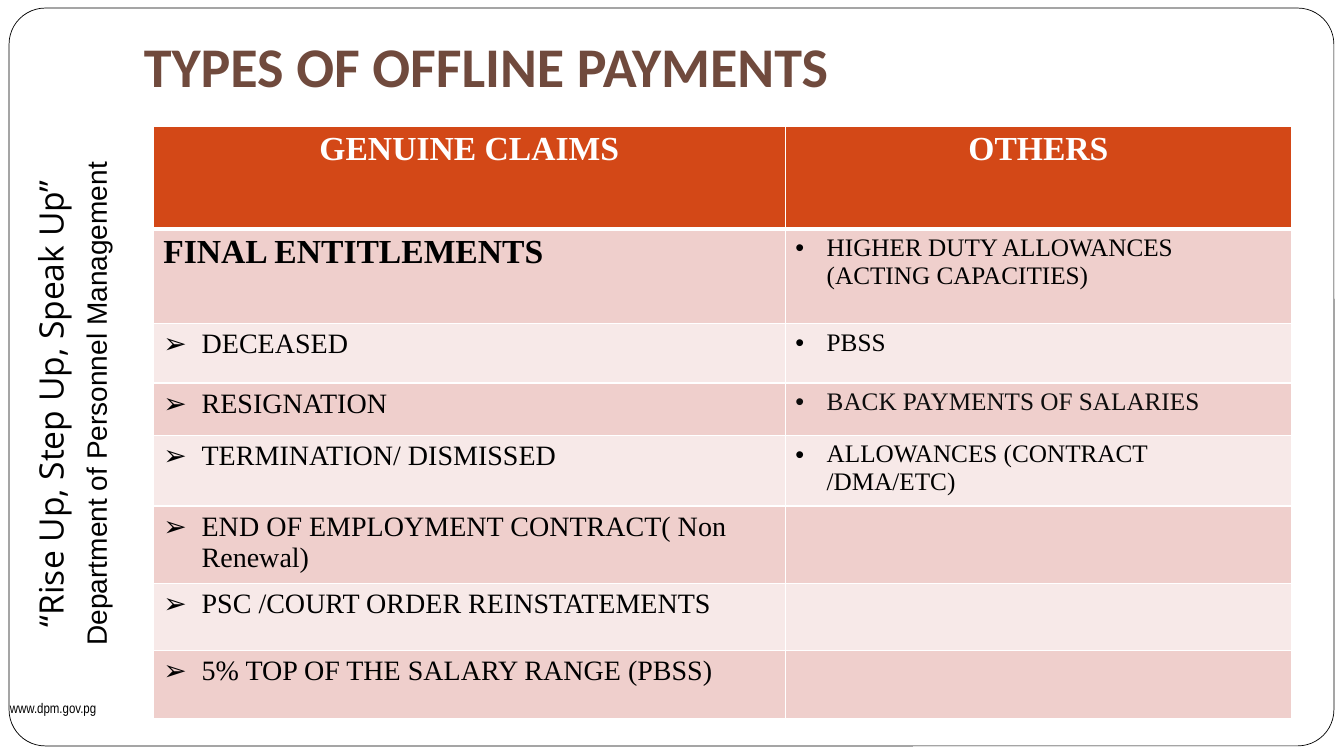
"""Build the slide on types of offline payments."""
from dataclasses import dataclass
from typing import Optional

from lxml.etree import SubElement
from pptx import Presentation
from pptx.dml.color import RGBColor
from pptx.enum.shapes import MSO_SHAPE as SHAPE
from pptx.enum.text import MSO_ANCHOR as ANCHOR, PP_ALIGN as ALIGN
from pptx.oxml.ns import qn
from pptx.util import Inches, Pt

BLACK = RGBColor(0x00, 0x00, 0x00)
NEAR_BLACK = RGBColor(0x0D, 0x0D, 0x0D)
WHITE = RGBColor(0xFF, 0xFF, 0xFF)
BROWN = RGBColor(0x70, 0x4A, 0x3D)
ORANGE = RGBColor(0xD3, 0x48, 0x17)
BANDS = RGBColor(0xEF, 0xCF, 0xCC), RGBColor(0xF7, 0xE9, 0xE8)


@dataclass
class Line:
    text: str
    size: float
    font: str
    color: RGBColor = BLACK
    bold: bool = False
    align: ALIGN = ALIGN.LEFT
    before: float = 0
    bullet: str = ""
    indent: float = 0


@dataclass
class Box:
    at: tuple[float, float, float, float]
    lines: list[Line]
    rotation: float = 0
    anchor: ANCHOR = ANCHOR.TOP
    bottom: float = 0.05


def heading(text: str) -> Line:
    return Line(text, 24, "Times New Roman", WHITE, True, ALIGN.CENTER)


def claim(text: str) -> Line:
    return Line(text, 20, "Times New Roman", bullet="➢", indent=0.38)


def other(text: str, color: RGBColor = BLACK) -> Line:
    return Line(text, 18, "Times New Roman", color, bullet="•", indent=0.31)


BOXES = [
    Box((-2.45, 3.54, 6.33, 0.93), [
        Line("“Rise Up, Step Up, Speak Up”", 24, "Open Sans", align=ALIGN.CENTER),
        Line("Department of Personnel Management", 20, "Arial", align=ALIGN.CENTER, before=6),
    ], rotation=270),
    Box((0, 6.89, 1.56, 0.28), [Line("www.dpm.gov.pg", 10, "Arial Narrow")]),
    Box((1.33, 0.3, 11.67, 0.78),
        [Line("TYPES OF OFFLINE PAYMENTS", 40, "Calibri", BROWN, True)],
        anchor=ANCHOR.BOTTOM, bottom=0.1),
]

COLUMNS = 6.27, 5.02
ROWS: list[tuple[float, Line, Optional[Line]]] = [
    (1.02, heading("GENUINE CLAIMS"), heading("OTHERS")),
    (0.94, Line("FINAL ENTITLEMENTS", 24, "Times New Roman", bold=True),
     other("HIGHER DUTY ALLOWANCES (ACTING CAPACITIES)")),
    (0.59, claim("DECEASED"), other("PBSS")),
    (0.52, claim("RESIGNATION"), other("BACK PAYMENTS OF SALARIES", NEAR_BLACK)),
    (0.66, claim("TERMINATION/ DISMISSED"), other("ALLOWANCES (CONTRACT /DMA/ETC)")),
    (0.71, claim("END OF EMPLOYMENT CONTRACT( Non Renewal)"), None),
    (0.67, claim("PSC /COURT ORDER REINSTATEMENTS"), None),
    (0.67, claim("5% TOP OF THE SALARY RANGE (PBSS)"), None),
]


def write(tf, lines: list[Line]) -> None:
    tf.text = "\n".join(line.text for line in lines)
    for p, line in zip(tf.paragraphs, lines):
        p.alignment = line.align
        if line.before:
            p.space_before = Pt(line.before)
        if line.bullet:
            pPr = p._p.get_or_add_pPr()
            pPr.set("marL", str(Inches(line.indent)))
            pPr.set("indent", str(-Inches(line.indent)))
            SubElement(pPr, qn("a:buFont")).set("typeface", "Arial")
            SubElement(pPr, qn("a:buChar")).set("char", line.bullet)
        for r in p.runs:
            r.font.size, r.font.name, r.font.bold = Pt(line.size), line.font, line.bold
            r.font.color.rgb = line.color


def add_frame(s) -> None:
    sp = s.shapes.add_shape(SHAPE.ROUNDED_RECTANGLE, Inches(0.09), Inches(0.08),
                            Inches(13.14), Inches(7.32))
    sp.adjustments[0] = 0.049
    sp.shadow.inherit = False
    sp.fill.solid()
    sp.fill.fore_color.rgb = WHITE
    sp.line.color.rgb = BLACK
    sp.line.width = Pt(0.5)


def add_box(s, box: Box) -> None:
    sp = s.shapes.add_textbox(*map(Inches, box.at))
    sp.rotation = box.rotation
    tf = sp.text_frame
    tf.word_wrap = True
    tf.vertical_anchor = box.anchor
    tf.margin_bottom = Inches(box.bottom)
    write(tf, box.lines)


def style_cell(cell, row: int) -> None:
    tcPr = cell._tc.get_or_add_tcPr()
    widths = {"L": 1, "R": 1, "T": 3 if row == 1 else 1, "B": 3 if row == 0 else 1}
    for side, width in widths.items():
        ln = SubElement(tcPr, qn(f"a:ln{side}"), w=str(Pt(width)))
        SubElement(SubElement(ln, qn("a:solidFill")), qn("a:srgbClr"), val=str(WHITE))
    cell.fill.solid()
    cell.fill.fore_color.rgb = BANDS[(row - 1) % 2] if row else ORANGE


def add_payments(s) -> None:
    height = sum(row[0] for row in ROWS)
    table = s.shapes.add_table(len(ROWS), len(COLUMNS), Inches(1.52), Inches(1.25),
                               Inches(sum(COLUMNS)), Inches(height)).table
    for column, width in zip(table.columns, COLUMNS):
        column.width = Inches(width)
    for i, (row_height, *lines) in enumerate(ROWS):
        table.rows[i].height = Inches(row_height)
        for j, line in enumerate(lines):
            cell = table.cell(i, j)
            style_cell(cell, i)
            if line:
                write(cell.text_frame, [line])


def main() -> None:
    prs = Presentation()
    prs.slide_width, prs.slide_height = Inches(13.33), Inches(7.5)
    s = prs.slides.add_slide(prs.slide_layouts[6])
    add_frame(s)
    for box in BOXES:
        add_box(s, box)
    add_payments(s)
    prs.save("out.pptx")


if __name__ == "__main__":
    main()
